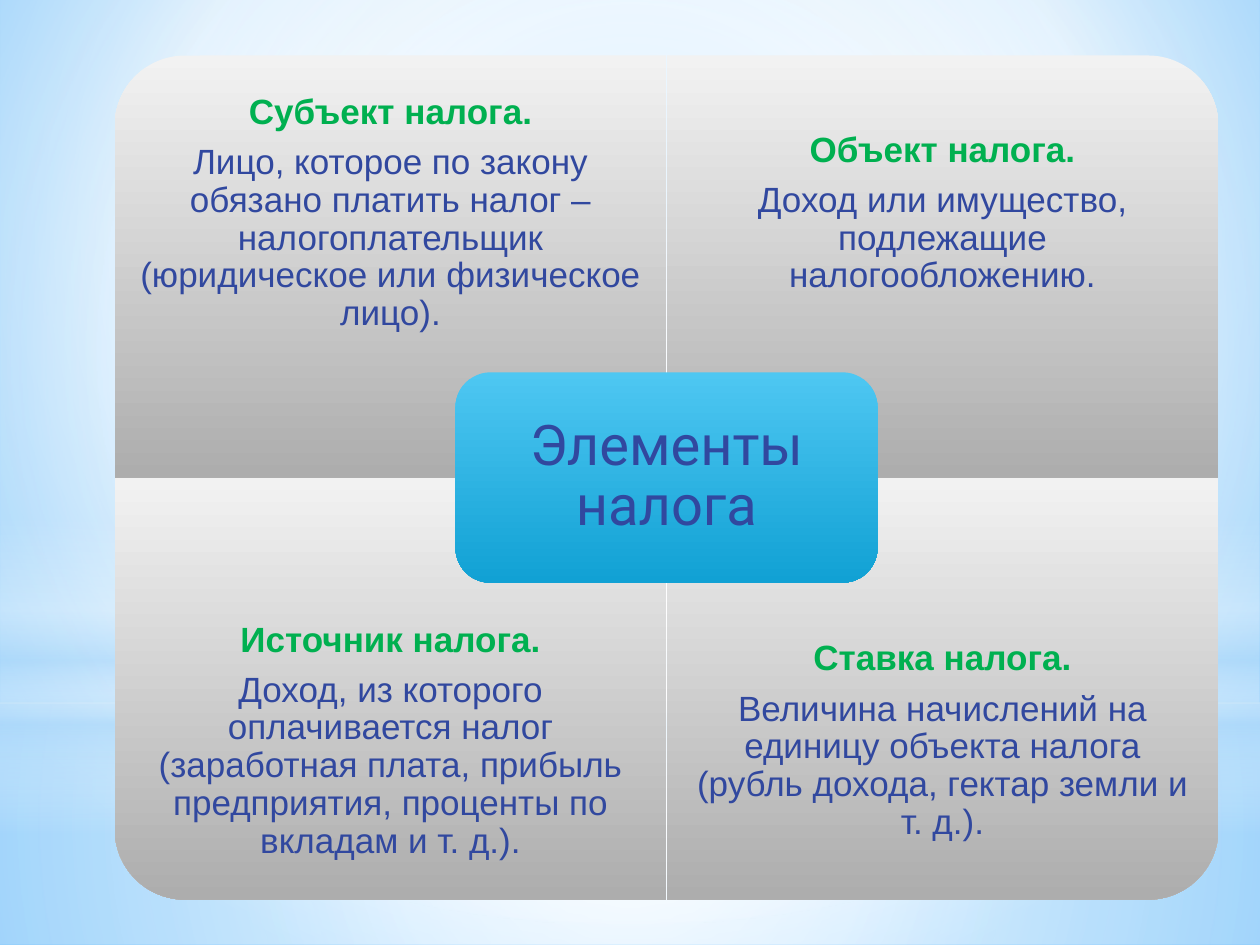
from dataclasses import dataclass

from lxml.etree import SubElement
from pptx import Presentation
from pptx.dml.color import RGBColor
from pptx.enum.shapes import MSO_SHAPE
from pptx.enum.text import MSO_ANCHOR, PP_ALIGN
from pptx.oxml.ns import qn
from pptx.util import Inches, Pt


@dataclass(frozen=True)
class Theme:
    """Colours, fonts and type sizes of the slide."""

    heading: str = "00B050"
    body: str = "31489F"
    panel: tuple = ((0, "F2F2F2"), (100, "ADADAD"))
    center: tuple = ((0, "4EC7F2"), (100, "11A1D4"))
    backdrop: tuple = ((0, "9ED5FF"), (60, "FFFFFF"), (100, "5BB9FF"))
    lower_glow: tuple = ((0, "FFFFFF", 91), (37, "FFFFFF", 76), (100, "B4DCFA", 79))
    upper_glow: tuple = ((0, "FFFFFF", 89), (48, "FFFFFF", 62), (100, "B4DCFA", 79))
    horizon: tuple = (
        (0, "FFFFFF", 0), (29, "FFFFFF", 30), (45, "B4DCFA", 40),
        (55, "FFFFFF", 26), (65, "B4DCFA", 60), (100, "FFFFFF", 0),
    )
    halo: tuple = ((0, "FFFFFF"), (56, "FFFFFF", 0))
    text_font: str = "Arial"
    center_font: str = "Roboto"
    text_size: int = 20
    center_size: int = 32


THEME = Theme()
MIDDLE = (50, 50, 50, 50)
LEFT, TOP = 0.91, 0.44
PANEL_WIDTH, PANEL_HEIGHT = 4.38, 3.35
TEXT_HEIGHT = 0.75 * PANEL_HEIGHT
CENTER_WIDTH, CENTER_HEIGHT = 3.35, 1.67
CENTER_MARGIN = 0.08

QUADRANTS = (
    (0, 0, 270, "Субъект налога.",
     "Лицо, которое по закону обязано платить налог – налогоплательщик "
     "(юридическое или физическое лицо)."),
    (0, 1, 0, "Объект налога.",
     "Доход или имущество, подлежащие налогообложению."),
    (1, 0, 180, "Источник налога.",
     "Доход, из которого оплачивается налог (заработная плата, прибыль "
     "предприятия, проценты по вкладам и т. д.)."),
    (1, 1, 90, "Ставка налога.",
     "Величина начислений на единицу объекта налога (рубль дохода, "
     "гектар земли и т. д.)."),
)


def paint_gradient(fill, element, stops, focus=None):
    """Fill with stops running downwards, or outwards from a focus rectangle."""
    fill.gradient()
    gradient = next(element.iter(qn("a:gradFill")))
    for child in list(gradient):
        gradient.remove(child)
    gradient.set("rotWithShape", "0")
    stop_list = SubElement(gradient, qn("a:gsLst"))
    for position, color, *opacity in stops:
        stop = SubElement(stop_list, qn("a:gs"), pos=str(position * 1000))
        tint = SubElement(stop, qn("a:srgbClr"), val=color)
        if opacity:
            SubElement(tint, qn("a:alpha"), val=str(opacity[0] * 1000))
    if focus:
        circle = SubElement(gradient, qn("a:path"), path="circle")
        edges = {side: str(share * 1000) for side, share in zip("ltrb", focus)}
        SubElement(circle, qn("a:fillToRect"), **edges)
    else:
        SubElement(gradient, qn("a:lin"), ang="5400000", scaled="0")


def add_block(shapes, kind, left, top, width, height, stops, focus=None, rotation=0):
    """Add a borderless gradient shape that covers the given area once rotated."""
    if rotation % 180:
        left, top = left + (width - height) / 2, top + (height - width) / 2
        width, height = height, width
    block = shapes.add_shape(kind, Inches(left), Inches(top), Inches(width), Inches(height))
    block.shadow.inherit = False
    block.line.fill.background()
    block.rotation = rotation
    paint_gradient(block.fill, block.element, stops, focus)


def add_text_box(shapes, left, top, width, height, inset):
    """Add a wrapping, vertically centred text box and return its frame."""
    box = shapes.add_textbox(Inches(left), Inches(top), Inches(width), Inches(height))
    frame = box.text_frame
    frame.word_wrap = True
    frame.vertical_anchor = MSO_ANCHOR.MIDDLE
    frame.margin_left = frame.margin_right = Inches(inset)
    frame.margin_top = frame.margin_bottom = Inches(inset)
    return frame


def write_text(para, text, *, color, size=THEME.text_size, font=THEME.text_font, bold=False):
    """Write one centred paragraph with the given format."""
    para.alignment = PP_ALIGN.CENTER
    para.line_spacing = 0.9
    para.space_after = Pt(round(0.35 * size))
    span = para.add_run()
    span.text = text
    span.font.name = font
    span.font.size = Pt(size)
    span.font.bold = bold
    span.font.color.rgb = RGBColor.from_string(color)


def add_backdrop(page):
    """Paint the background and its light overlays."""
    paint_gradient(page.background.fill, page.element, THEME.backdrop, (20, 10, 20, 60))
    rectangle = MSO_SHAPE.RECTANGLE
    add_block(page.shapes, rectangle, 0, 5.58, 10, 1.92, THEME.lower_glow, MIDDLE)
    add_block(page.shapes, rectangle, 0, 0, 10, 5.58, THEME.upper_glow, MIDDLE)
    add_block(page.shapes, rectangle, 0, 4.12, 10, 2.5, THEME.horizon)
    add_block(page.shapes, MSO_SHAPE.OVAL, 0, 1.75, 10, 5.58, THEME.halo, MIDDLE)


def add_quadrant(shapes, row, column, rotation, heading, body):
    """Add one panel with its heading and explanation."""
    left, top = LEFT + column * PANEL_WIDTH, TOP + row * PANEL_HEIGHT
    add_block(shapes, MSO_SHAPE.ROUND_1_RECTANGLE, left, top,
              PANEL_WIDTH, PANEL_HEIGHT, THEME.panel, rotation=rotation)
    text_top = top + row * (PANEL_HEIGHT - TEXT_HEIGHT)
    frame = add_text_box(shapes, left, text_top, PANEL_WIDTH, TEXT_HEIGHT, 0.16)
    write_text(frame.paragraphs[0], heading, color=THEME.heading, bold=True)
    write_text(frame.add_paragraph(), body, color=THEME.body)


def add_center(shapes):
    """Add the central label where the four panels meet."""
    left = LEFT + PANEL_WIDTH - CENTER_WIDTH / 2
    top = TOP + PANEL_HEIGHT - CENTER_HEIGHT / 2
    add_block(shapes, MSO_SHAPE.ROUNDED_RECTANGLE, left, top,
              CENTER_WIDTH, CENTER_HEIGHT, THEME.center)
    frame = add_text_box(shapes, left + CENTER_MARGIN, top + CENTER_MARGIN,
                         CENTER_WIDTH - 2 * CENTER_MARGIN,
                         CENTER_HEIGHT - 2 * CENTER_MARGIN, 0.13)
    write_text(frame.paragraphs[0], "Элементы налога", color=THEME.body,
               size=THEME.center_size, font=THEME.center_font)


def main():
    """Build the slide on the elements of a tax."""
    deck = Presentation()
    deck.slide_width, deck.slide_height = Inches(10), Inches(7.5)
    page = deck.slides.add_slide(deck.slide_layouts[6])
    add_backdrop(page)
    diagram = page.shapes.add_group_shape()
    for quadrant in QUADRANTS:
        add_quadrant(diagram.shapes, *quadrant)
    add_center(diagram.shapes)
    deck.save("out.pptx")


if __name__ == "__main__":
    main()
